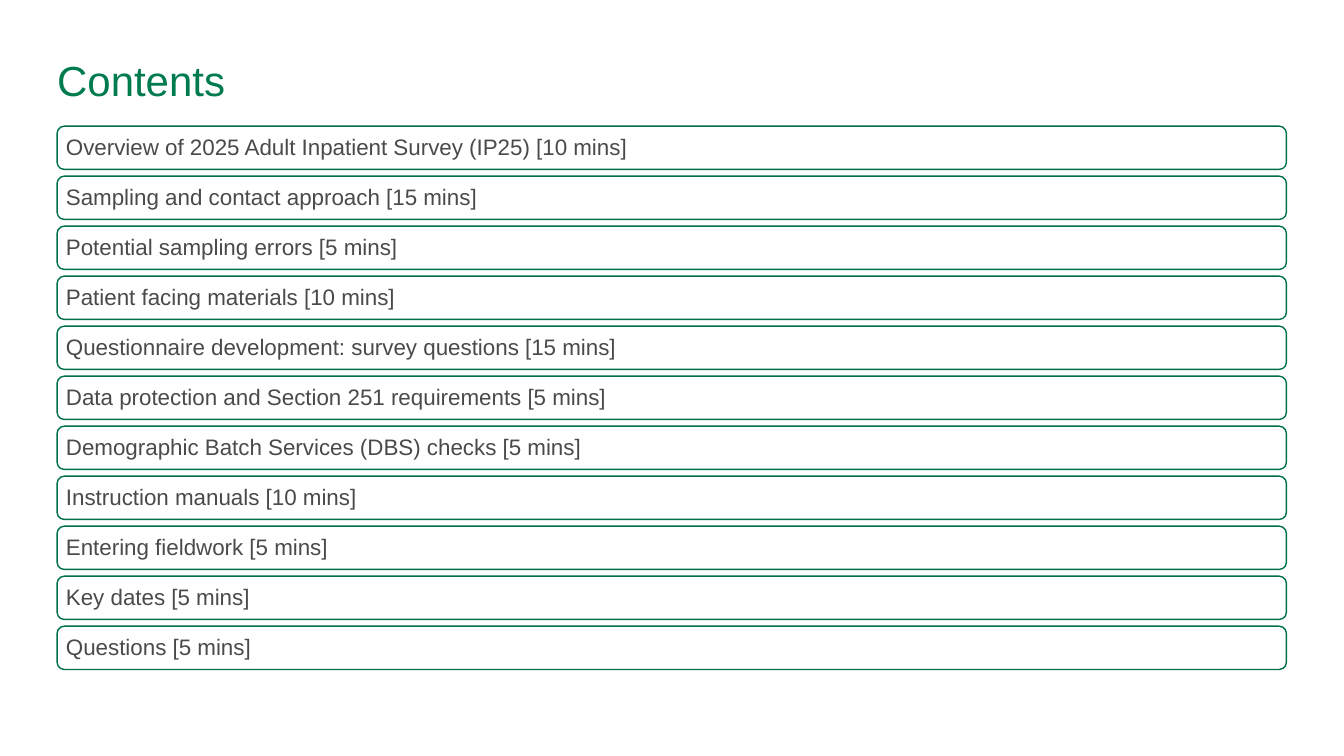
from dataclasses import dataclass

from pptx import Presentation
from pptx import util as u
from pptx.dml import color
from pptx.enum import shapes, text

GREEN = color.RGBColor(0x00, 0x7B, 0x4E)
DARK_GREEN = color.RGBColor(0x00, 0x70, 0x47)
GREY = color.RGBColor(0x4A, 0x4A, 0x49)
WHITE = color.RGBColor(0xFF, 0xFF, 0xFF)

LEFT = 1.44
FIRST_TOP = 3.18
ROW_PITCH = 1.26
ROW_WIDTH = 30.98
ROW_HEIGHT = 1.09


@dataclass
class Session:
    topic: str
    minutes: int


SESSIONS = [
    Session("Overview of 2025 Adult Inpatient Survey (IP25)", 10),
    Session("Sampling and contact approach", 15),
    Session("Potential sampling errors", 5),
    Session("Patient facing materials", 10),
    Session("Questionnaire development: survey questions", 15),
    Session("Data protection and Section 251 requirements", 5),
    Session("Demographic Batch Services (DBS) checks", 5),
    Session("Instruction manuals", 10),
    Session("Entering fieldwork", 5),
    Session("Key dates", 5),
    Session("Questions", 5),
]


def write_text(shape, wording: str, size: float, colour: color.RGBColor,
               anchor: text.MSO_ANCHOR, inset: float = 0):
    frame = shape.text_frame
    frame.word_wrap = True
    frame.vertical_anchor = anchor
    frame.margin_left = frame.margin_right = u.Cm(inset)
    frame.margin_top = frame.margin_bottom = u.Cm(inset)
    paragraph = frame.paragraphs[0]
    paragraph.alignment = text.PP_ALIGN.LEFT
    run = paragraph.add_run()
    run.text = wording
    run.font.name = "Arial"
    run.font.size = u.Pt(size)
    run.font.color.rgb = colour
    return paragraph


def add_title(slide, wording: str) -> None:
    title = slide.shapes.add_textbox(u.Cm(LEFT), u.Cm(1.37), u.Cm(15.49), u.Cm(1.27))
    write_text(title, wording, 30, GREEN, text.MSO_ANCHOR.BOTTOM)


def add_session(slide, session: Session, top: float) -> None:
    row = slide.shapes.add_shape(
        shapes.MSO_SHAPE.ROUNDED_RECTANGLE,
        u.Cm(LEFT), u.Cm(top), u.Cm(ROW_WIDTH), u.Cm(ROW_HEIGHT))
    row.shadow.inherit = False
    row.fill.solid()
    row.fill.fore_color.rgb = WHITE
    row.line.color.rgb = DARK_GREEN
    row.line.width = u.Pt(1)
    wording = f"{session.topic} [{session.minutes} mins]"
    paragraph = write_text(row, wording, 16, GREY, text.MSO_ANCHOR.MIDDLE, inset=0.17)
    paragraph.line_spacing = 0.9


def main() -> None:
    presentation = Presentation()
    presentation.slide_width = u.Cm(33.87)
    presentation.slide_height = u.Cm(19.05)
    slide = presentation.slides.add_slide(presentation.slide_layouts[6])
    add_title(slide, "Contents")
    for index, session in enumerate(SESSIONS):
        add_session(slide, session, FIRST_TOP + index * ROW_PITCH)
    presentation.save("out.pptx")


if __name__ == "__main__":
    main()
